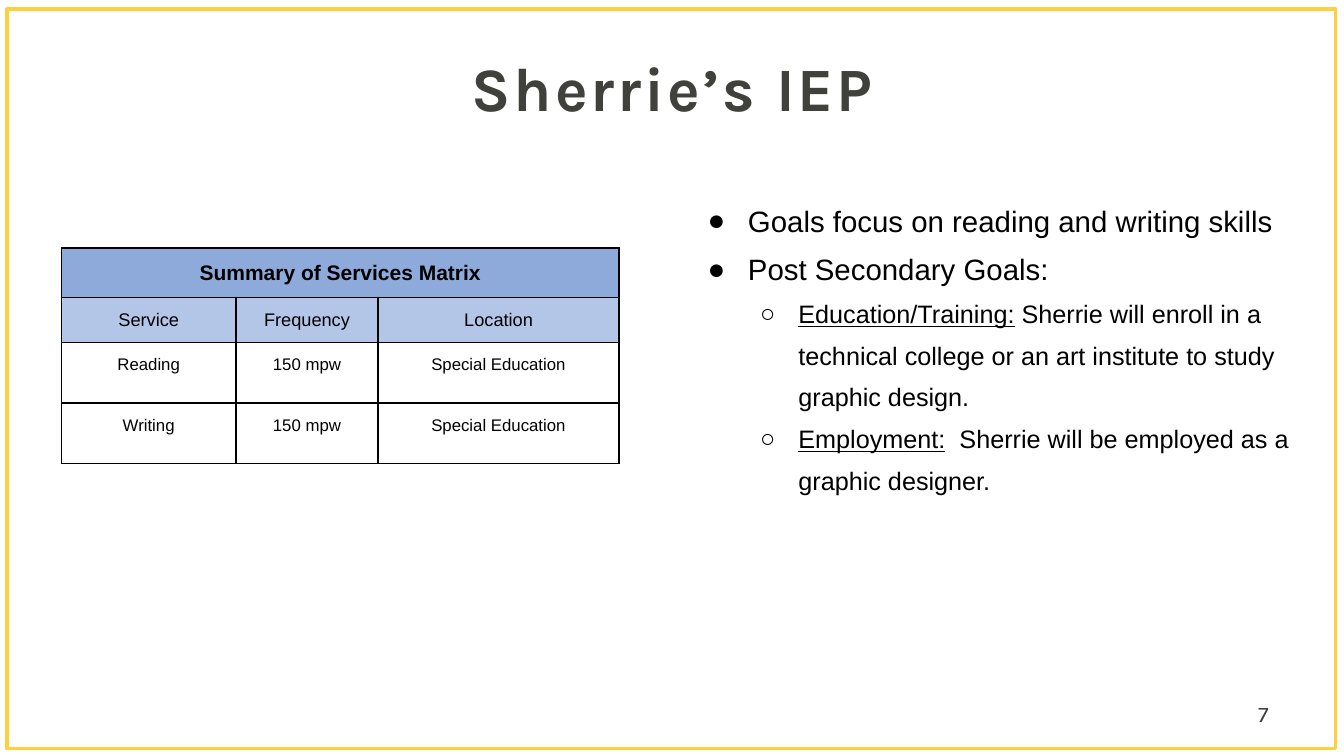
import pptx
import pptx.util
import pptx.dml.color
import pptx.enum.shapes
import pptx.enum.text
import pptx.oxml
import pptx.oxml.ns

Inches = pptx.util.Inches
Pt = pptx.util.Pt
RGBColor = pptx.dml.color.RGBColor
Align = pptx.enum.text.PP_ALIGN
Anchor = pptx.enum.text.MSO_ANCHOR

GOLD = RGBColor(0xFF, 0xCF, 0x3C)
GREY = RGBColor(0x40, 0x40, 0x3D)
BLACK = RGBColor(0, 0, 0)
BLUE = RGBColor(0x8E, 0xAA, 0xDB)
PALE = RGBColor(0xB4, 0xC6, 0xE7)


class Page:
    head = "Karla"
    body = "Arial"

    def __init__(self, deck):
        self.slide = deck.slides.add_slide(deck.slide_layouts[6])

    def node(self, tag, inner="", **attrs):
        text = " ".join(f'{key}="{val}"' for key, val in attrs.items())
        space = pptx.oxml.ns.nsdecls("a")
        return pptx.oxml.parse_xml(f"<a:{tag} {space} {text}>{inner}</a:{tag}>")

    def run(self, para, text, size, font, color, bold=False, under=False, gap=0):
        run = para.add_run()
        run.text = text
        run.font.size = Pt(size)
        run.font.name = font
        run.font.color.rgb = color
        run.font.bold = bold
        run.font.underline = under
        if gap:
            run.font._element.set("spc", str(gap))

    def frame(self, left, top, width, height, color):
        kind = pptx.enum.shapes.MSO_SHAPE.RECTANGLE
        shape = self.slide.shapes.add_shape(
            kind, Inches(left), Inches(top), Inches(width), Inches(height))
        shape.shadow.inherit = False
        shape.fill.background()
        shape.line.color.rgb = color
        shape.line.width = Pt(2.25)

    def box(self, left, top, width, height, anchor=Anchor.MIDDLE, pad=0.05):
        shape = self.slide.shapes.add_textbox(
            Inches(left), Inches(top), Inches(width), Inches(height))
        frame = shape.text_frame
        frame.word_wrap = True
        frame.vertical_anchor = anchor
        frame.margin_left = frame.margin_right = Inches(0.1)
        frame.margin_top = frame.margin_bottom = Inches(pad)
        return frame

    def label(self, spot, text, size, align, bold=False, gap=0):
        para = self.box(*spot).paragraphs[0]
        para.alignment = align
        para.line_spacing = 0.9
        self.run(para, text, size, self.head, GREY, bold, gap=gap)

    def bullets(self, spot, items):
        frame = self.box(*spot, anchor=Anchor.TOP, pad=0.1)
        for index, (level, parts) in enumerate(items):
            para = frame.add_paragraph() if index else frame.paragraphs[0]
            mark, size, left, hang = [
                ("●", 21, 0.5, 0.4), ("○", 18, 1, 0.38)][level]
            para.level = level
            para.line_spacing = 1.38
            props = para._p.get_or_add_pPr()
            props.set("marL", str(Inches(left)))
            props.set("indent", str(-Inches(hang)))
            props.append(self.node("buClr", f'<a:srgbClr val="{BLACK}"/>'))
            props.append(self.node("buFont", typeface=self.body))
            props.append(self.node("buChar", char=mark))
            for text, under in parts:
                self.run(para, text, size, self.body, BLACK, under=under)

    def cell(self, cell, text, size, fill, bold):
        cell.margin_left = cell.margin_right = Inches(0.07)
        cell.margin_top = cell.margin_bottom = Inches(0.1)
        if fill:
            cell.fill.solid()
            cell.fill.fore_color.rgb = fill
        else:
            cell.fill.background()
        color = f'<a:solidFill><a:srgbClr val="{BLACK}"/></a:solidFill>'
        props = cell._tc.get_or_add_tcPr()
        for index, side in enumerate(("lnL", "lnR", "lnT", "lnB")):
            props.insert(index, self.node(side, color, w=Pt(1)))
        if text:
            para = cell.text_frame.paragraphs[0]
            para.alignment = Align.CENTER
            para.line_spacing = 1.15
            self.run(para, text, size, self.body, BLACK, bold)

    def table(self, left, top, widths, rows):
        high = sum(row[0] for row in rows)
        table = self.slide.shapes.add_table(
            len(rows), len(widths), Inches(left), Inches(top),
            Inches(sum(widths)), Inches(high)).table
        table.first_row = table.horz_banding = False
        for col, width in zip(table.columns, widths):
            col.width = Inches(width)
        for r, (height, size, fill, bold, texts) in enumerate(rows):
            table.rows[r].height = Inches(height)
            for c in range(len(widths)):
                text = texts[c] if c < len(texts) else ""
                self.cell(table.cell(r, c), text, size, fill, bold)
            if len(texts) == 1:
                table.cell(r, 0).merge(table.cell(r, len(widths) - 1))


def main():
    deck = pptx.Presentation()
    deck.slide_width = Inches(13.33)
    deck.slide_height = Inches(7.5)
    page = Page(deck)
    page.frame(0.07, 0.09, 13.18, 7.34, GOLD)
    page.label((0.92, 0.18, 11.5, 1.45), "Sherrie’s IEP", 44,
               Align.CENTER, bold=True, gap=200)
    page.table(0.61, 2.46, (1.73, 1.41, 2.39), [
        (0.46, 15, BLUE, True, ["Summary of Services Matrix"]),
        (0.3, 13, PALE, False, ["Service", "Frequency", "Location"]),
        (0.6, 12, None, False, ["Reading", "150 mpw", "Special Education"]),
        (0.6, 12, None, False, ["Writing", "150 mpw", "Special Education"]),
    ])
    page.bullets((6.82, 1.78, 6.09, 5.32), [
        (0, [("Goals focus on reading and writing skills", False)]),
        (0, [("Post Secondary Goals:", False)]),
        (1, [("Education/Training:", True),
             (" Sherrie will enroll in a technical college or an art "
              "institute to study graphic design.", False)]),
        (1, [("Employment:", True),
             ("  Sherrie will be employed as a graphic designer.", False)]),
    ])
    page.label((12.38, 6.9, 0.7, 0.4), "7", 16, Align.LEFT)
    deck.save("out.pptx")


if __name__ == "__main__":
    main()
